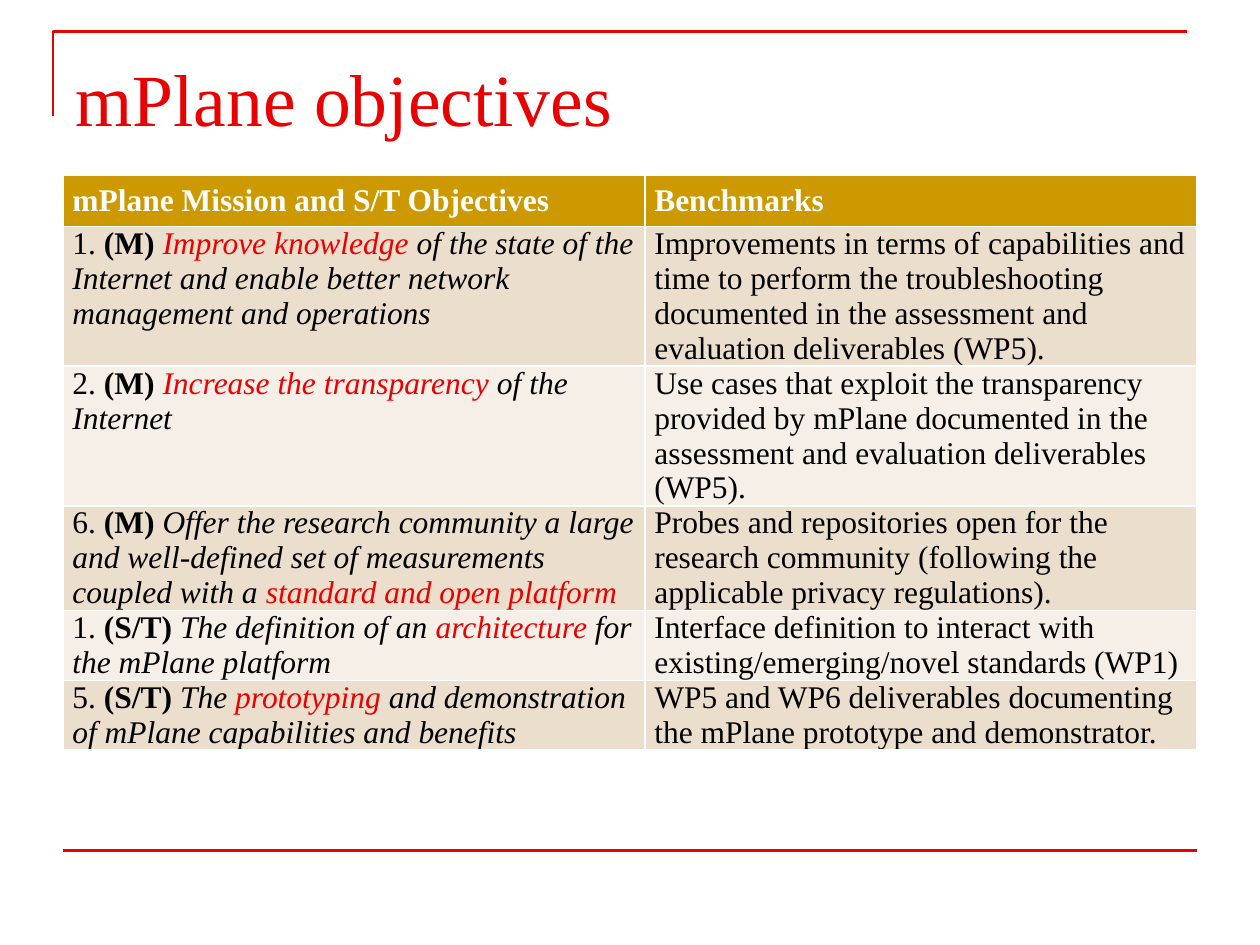
"""Builds the mPlane objectives slide with its table of benchmarks."""
from dataclasses import dataclass

from lxml import etree
from pptx import Presentation
from pptx.dml.color import RGBColor
from pptx.enum import shapes, text
from pptx.oxml import ns
from pptx.util import Cm, Pt


@dataclass(frozen=True)
class Theme:
    """Colours, font and type sizes of the slide."""
    accent: str = "E80202"
    header: str = "CC9900"
    bands: tuple = ("ECDECC", "F6EFE7")
    light: str = "FFFFFF"
    dark: str = "000000"
    font: str = "Times New Roman"
    title_size: int = 42
    table_size: int = 18
    rule_width: float = 1.5


THEME = Theme()
HEADINGS = ("mPlane Mission and S/T Objectives", "Benchmarks")
OBJECTIVES = (
    ("1. ", "(M) ", "*Improve knowledge *of the state of the Internet and enable "
     "better network management and operations",
     "Improvements in terms of capabilities and time to perform the troubleshooting "
     "documented in the assessment and evaluation deliverables (WP5)."),
    ("2. ", "(M) ", "*Increase the transparency *of the Internet",
     "Use cases that exploit the transparency provided by mPlane documented in the "
     "assessment and evaluation deliverables (WP5)."),
    ("6. ", "(M) ", "Offer the research community a large and well-defined set of "
     "measurements coupled with a *standard and open platform*",
     "Probes and repositories open for the research community (following the "
     "applicable privacy regulations)."),
    ("1. ", "(S/T) ", "The definition of an *architecture* for the mPlane platform",
     "Interface definition to interact with existing/emerging/novel standards (WP1)"),
    ("5. ", "(S/T) ", "The *prototyping* and demonstration of mPlane capabilities "
     "and benefits",
     "WP5 and WP6 deliverables documenting the mPlane prototype and demonstrator."),
)


def rgb(value):
    """Return the colour for a hexadecimal string."""
    return RGBColor.from_string(value)


def format_run(run, size, color, bold=False, italic=False):
    """Apply the theme font and the given style to a run."""
    font = run.font
    font.name, font.size = THEME.font, Pt(size)
    font.bold, font.italic = bold, italic
    font.color.rgb = rgb(color)


def style_rule(line):
    """Give a line the accent colour and rule width."""
    line.color.rgb = rgb(THEME.accent)
    line.width = Pt(THEME.rule_width)


def add_corner(slide):
    """Draw the open corner around the top left of the title."""
    builder = slide.shapes.build_freeform(Cm(1.07), Cm(2.34))
    builder.add_line_segments([(Cm(1.07), Cm(0.64)), (Cm(23.93), Cm(0.64))], close=False)
    corner = builder.convert_to_shape()
    corner.shadow.inherit = False
    corner.fill.background()
    style_rule(corner.line)


def add_bottom_rule(slide):
    """Draw the rule at the foot of the slide."""
    rule = slide.shapes.add_connector(
        shapes.MSO_CONNECTOR.STRAIGHT, Cm(1.27), Cm(17.15), Cm(24.13), Cm(17.15))
    style_rule(rule.line)
    etree.SubElement(rule._element.spPr, ns.qn("a:effectLst"))


def fill_title(slide):
    """Place and format the slide title."""
    title = slide.shapes.title
    title.left, title.top, title.width, title.height = Cm(1.27), Cm(0.76), Cm(22.86), Cm(3.18)
    frame = title.text_frame
    frame.text = "mPlane objectives"
    frame.vertical_anchor = text.MSO_ANCHOR.TOP
    frame.margin_top = Cm(0.31)
    paragraph = frame.paragraphs[0]
    paragraph.alignment = text.PP_ALIGN.LEFT
    format_run(paragraph.runs[0], THEME.title_size, THEME.accent)


def fill_cell(cell, fill, pieces, anchor=text.MSO_ANCHOR.TOP):
    """Fill a cell with pieces of (wording, colour, bold, italic)."""
    cell.fill.solid()
    cell.fill.fore_color.rgb = rgb(fill)
    cell.margin_left = cell.margin_right = Cm(0.19)
    cell.margin_top = cell.margin_bottom = 0
    cell.vertical_anchor = anchor
    paragraph = cell.text_frame.paragraphs[0]
    for wording, color, bold, italic in pieces:
        run = paragraph.add_run()
        run.text = wording
        format_run(run, THEME.table_size, color, bold, italic)


def objective_pieces(number, tag, wording):
    """Split an objective into styled pieces, with starred words in the accent."""
    pieces = [(number, THEME.dark, False, False), (tag, THEME.dark, True, False)]
    for index, part in enumerate(wording.split("*")):
        if part:
            pieces.append((part, THEME.accent if index % 2 else THEME.dark, False, True))
    return pieces


def add_objectives_table(slide):
    """Add the table of objectives and benchmarks."""
    rows = len(OBJECTIVES) + 1
    table = slide.shapes.add_table(
        rows, 2, Cm(1.27), Cm(3.54), Cm(22.86), Cm(1.03) * rows).table
    for column, width in zip(table.columns, (11.73, 11.13)):
        column.width = Cm(width)
    for column, heading in enumerate(HEADINGS):
        fill_cell(table.cell(0, column), THEME.header,
                  [(heading, THEME.light, True, False)], text.MSO_ANCHOR.MIDDLE)
    for row, (number, tag, wording, benchmark) in enumerate(OBJECTIVES, 1):
        band = THEME.bands[(row - 1) % 2]
        fill_cell(table.cell(row, 0), band, objective_pieces(number, tag, wording))
        fill_cell(table.cell(row, 1), band, [(benchmark, THEME.dark, False, False)])


def main():
    """Build the slide and save it."""
    presentation = Presentation()
    presentation.slide_width, presentation.slide_height = Cm(25.4), Cm(19.05)
    slide = presentation.slides.add_slide(presentation.slide_layouts[5])
    add_corner(slide)
    add_bottom_rule(slide)
    fill_title(slide)
    add_objectives_table(slide)
    presentation.save("out.pptx")


if __name__ == "__main__":
    main()
